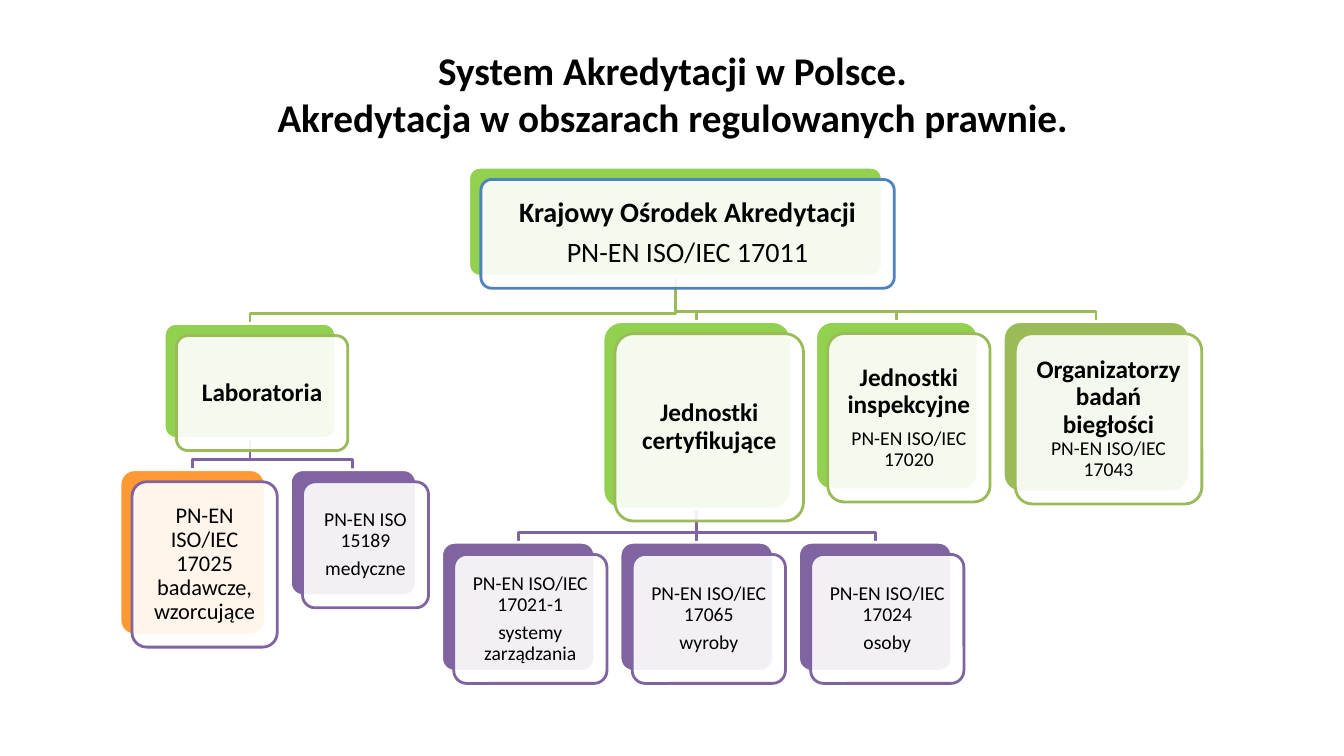
from dataclasses import dataclass
from typing import Optional

from lxml import etree
from pptx import Presentation
from pptx import util as u
from pptx.dml.color import RGBColor
from pptx.enum import shapes, text
from pptx.oxml.ns import qn

PX = 9144
OFFSET = 12
BAR_GAP = 10
LIME, OLIVE, PURPLE = "92D050", "9BBB59", "8064A2"
ORANGE, BLUE, WHITE, BLACK = "FF9933", "4F81BD", "FFFFFF", "000000"


@dataclass(frozen=True)
class Line:
    text: str
    size: int
    bold: bool = False


Paragraph = tuple[Line, ...]


@dataclass(frozen=True)
class Node:
    x: int
    y: int
    w: int
    h: int
    back: str
    edge: str
    paragraphs: tuple[Paragraph, ...]
    parent: Optional["Node"] = None

    @property
    def center(self) -> int:
        return self.x + self.w // 2


def plain(*texts: str, size: int = 14) -> tuple[Paragraph, ...]:
    return tuple((Line(t, size),) for t in texts)


CENTRE = Node(465, 166, 410, 108, LIME, BLUE, (
    (Line("Krajowy Ośrodek Akredytacji", 20, True),),
    (Line("PN-EN ISO/IEC 17011", 20),)))
LABS = Node(163, 321, 170, 114, LIME, OLIVE,
            ((Line("Laboratoria", 18, True),),), CENTRE)
CERTIFIERS = Node(598, 319, 187, 186, LIME, OLIVE,
                  ((Line("Jednostki certyfikujące", 18, True),),), CENTRE)
INSPECTORS = Node(809, 319, 161, 167, LIME, OLIVE, (
    (Line("Jednostki inspekcyjne", 18, True),),
    (Line("PN-EN ISO/IEC 17020", 14),)), CENTRE)
ORGANISERS = Node(995, 319, 185, 169, OLIVE, OLIVE, (
    (Line("Organizatorzy badań biegłości", 18, True),
     Line("PN-EN ISO/IEC 17043", 14)),), CENTRE)
TESTING = Node(119, 466, 144, 164, ORANGE, PURPLE,
               plain("PN-EN ISO/IEC 17025 badawcze, wzorcujące", size=16), LABS)
MEDICAL = Node(288, 466, 125, 125, PURPLE, PURPLE,
               plain("PN-EN ISO 15189", "medyczne"), LABS)
CERTIFIED = [
    Node(438 + 177 * i, 538, 152, 128, PURPLE, PURPLE, plain(standard, scope), CERTIFIERS)
    for i, (standard, scope) in enumerate([
        ("PN-EN ISO/IEC 17021-1", "systemy zarządzania"),
        ("PN-EN ISO/IEC 17065", "wyroby"),
        ("PN-EN ISO/IEC 17024", "osoby"),
    ])
]
NODES = [CENTRE, LABS, TESTING, MEDICAL, CERTIFIERS, *CERTIFIED, INSPECTORS, ORGANISERS]

TITLE: Paragraph = (
    Line("System Akredytacji w Polsce.", 28, True),
    Line("Akredytacja w obszarach regulowanych prawnie.", 28, True),
)


def paint(target, colour: str, alpha: int = 100) -> None:
    target.solid()
    target.fore_color.rgb = RGBColor.from_string(colour)
    if alpha < 100:
        clr = target._xPr.find(qn("a:solidFill"))[0]
        etree.SubElement(clr, qn("a:alpha"), val=str(alpha * 1000))


def stroke(sp, colour: str) -> None:
    paint(sp.line.fill, colour)
    sp.line.width = u.Pt(2)


def write(p, lines: Paragraph) -> None:
    p.alignment = text.PP_ALIGN.CENTER
    p.font.name = "Calibri"
    paint(p.font.fill, BLACK)
    for i, line in enumerate(lines):
        if i:
            p.add_line_break()
        r = p.add_run()
        r.text = line.text
        r.font.size = u.Pt(line.size)
        r.font.bold = line.bold


def draw_link(s, child: Node) -> None:
    parent = child.parent
    if parent is None:
        return
    start = (parent.center, parent.y + parent.h)
    end = (child.center, child.y)
    bar = child.y - BAR_GAP
    if start[0] == end[0]:
        sp = s.shapes.add_connector(
            shapes.MSO_CONNECTOR.STRAIGHT, *(v * PX for v in start + end))
        etree.SubElement(sp._element.spPr, qn("a:effectLst"))
    else:
        fb = s.shapes.build_freeform(*start, scale=PX)
        fb.add_line_segments([(start[0], bar), (end[0], bar), end], close=False)
        sp = fb.convert_to_shape()
        sp.fill.background()
        sp.shadow.inherit = False
    stroke(sp, child.edge)


def draw_card(s, node: Node, shift: int, fill: str, alpha: int, edge: str):
    sp = s.shapes.add_shape(
        shapes.MSO_SHAPE.ROUNDED_RECTANGLE,
        (node.x + shift) * PX, (node.y + shift) * PX, node.w * PX, node.h * PX)
    sp.adjustments[0] = 0.1
    sp.shadow.inherit = False
    paint(sp.fill, fill, alpha)
    stroke(sp, edge)
    return sp


def draw_node(s, node: Node) -> None:
    draw_card(s, node, 0, node.back, 100, WHITE)
    tf = draw_card(s, node, OFFSET, WHITE, 90, node.edge).text_frame
    tf.word_wrap = True
    tf.vertical_anchor = text.MSO_ANCHOR.MIDDLE
    inset = u.Pt(node.paragraphs[0][0].size * 0.3)
    tf.margin_left = tf.margin_right = tf.margin_top = tf.margin_bottom = inset
    for i, lines in enumerate(node.paragraphs):
        p = tf.add_paragraph() if i else tf.paragraphs[0]
        p.line_spacing = 0.9
        p.space_after = u.Pt(lines[0].size * 0.35)
        write(p, lines)


def draw_title(s) -> None:
    sp = s.shapes.title
    sp.left, sp.top, sp.width, sp.height = (v * PX for v in (67, 30, 1200, 125))
    tf = sp.text_frame
    tf.auto_size = text.MSO_AUTO_SIZE.NONE
    tf.vertical_anchor = text.MSO_ANCHOR.MIDDLE
    write(tf.paragraphs[0], TITLE)


def main() -> None:
    prs = Presentation()
    prs.slide_width, prs.slide_height = 1333 * PX, 750 * PX
    s = prs.slides.add_slide(prs.slide_layouts[5])
    draw_title(s)
    for node in NODES:
        draw_link(s, node)
    for node in NODES:
        draw_node(s, node)
    prs.save("out.pptx")


if __name__ == "__main__":
    main()
